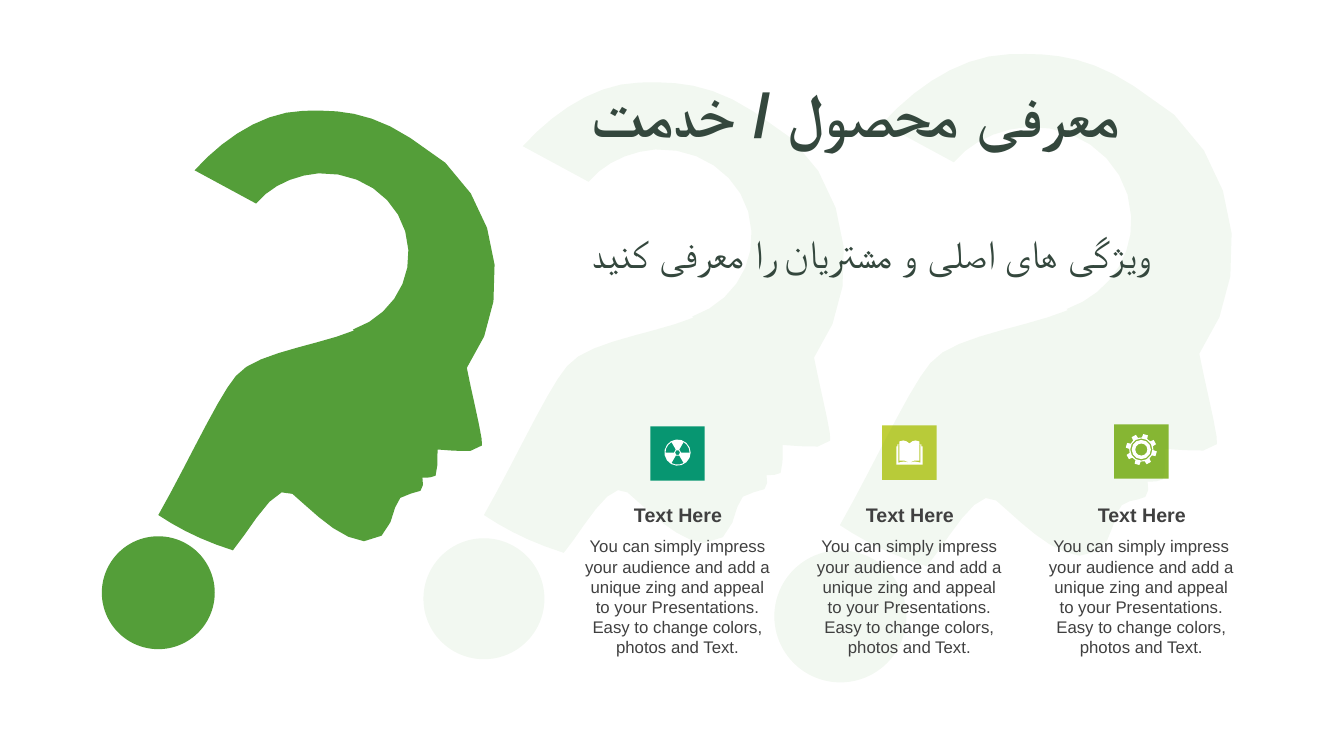
from math import cos, radians, sin
from lxml.etree import SubElement
from pptx import Presentation
from pptx.dml.color import RGBColor
from pptx.enum.shapes import MSO_SHAPE as Preset
from pptx.enum.text import MSO_ANCHOR as Anchor, MSO_AUTO_SIZE as AutoSize, PP_ALIGN as Align
from pptx.oxml.ns import qn
from pptx.util import Pt

PX = 9144
GREEN, DARK, GREY, WHITE = "549E39", "34473D", "404040", "FFFFFF"


def paint(shape, color, opacity=100):
    shape.shadow.inherit = False
    shape.line.fill.background()
    shape.fill.solid()
    shape.fill.fore_color.rgb = RGBColor.from_string(color)
    if opacity < 100:
        color_node = shape.element.spPr.find(".//" + qn("a:srgbClr"))
        SubElement(color_node, qn("a:alpha"), val=str(opacity * 1000))


def write(shape, text, box, size, color, bold=False, align=Align.LEFT, anchor=Anchor.TOP):
    shape.left, shape.top, shape.width, shape.height = [length * PX for length in box]
    frame = shape.text_frame
    frame.word_wrap = True
    frame.auto_size = AutoSize.SHAPE_TO_FIT_TEXT
    frame.vertical_anchor = anchor
    paragraph = frame.paragraphs[0]
    paragraph.alignment = align
    run = paragraph.add_run()
    run.text = text
    run.font.name = "Arial"
    run.font.size = Pt(size)
    run.font.bold = bold
    run.font.color.rgb = RGBColor.from_string(color)
    SubElement(run.font._element, qn("a:cs"), typeface="Arial")


presentation = Presentation()
presentation.slide_width = 1333 * PX
presentation.slide_height = 750 * PX
slide = presentation.slides.add_slide(presentation.slide_layouts[5])
shapes = slide.shapes

head = [
    (301, 110), (334, 109, 366, 110, 407, 137), (499, 186, 512, 298, 463, 365),
    (468, 391, 480, 439, 478, 442), (470, 452, 449, 446, 434, 446),
    (434, 455, 434, 470, 432, 472), (429, 474, 424, 474, 419, 474),
    (419, 478, 421, 485, 417, 487), (412, 490, 403, 489, 397, 494),
    (388, 500, 392, 538, 361, 537), (335, 534, 310, 507, 290, 490),
    (274, 476, 248, 526, 231, 546), (202, 537, 178, 525, 157, 511),
    (185, 462, 216, 394, 234, 373), (252, 350, 315, 343, 351, 328), (350, 327),
    (384, 315, 407, 284, 405, 248), (403, 203, 363, 170, 316, 172),
    (291, 174, 268, 185, 254, 202), (193, 169), (222, 137, 261, 111, 301, 110),
]

book = [
    [(902, 440), (900, 438, 898, 437, 896, 437), (892, 438),
     (892, 441), (890, 441), (890, 443), (889, 443), (889, 461), (915, 461),
     (915, 443), (914, 443), (914, 441), (912, 441), (912, 438), (908, 437),
     (906, 437, 904, 438, 902, 440)],
]
for side in (-1, 1):
    book.append([(902 + 11 * side, 441), (902 + 10 * side, 441), (902 + 10 * side, 457),
                 (902 + 7 * side, 456, 902 + 3 * side, 457, 902, 459),
                 (902 + 4 * side, 458, 902 + 7 * side, 457, 902 + 11 * side, 459)])

radiation_arcs = [[(13, angle) for angle in range(0, 360, 24)],
                  [(2.5, angle) for angle in range(0, 360, 60)]]
for start in (60, 180, 300):
    radiation_arcs.append([(3.5, start), *[(12, start + step) for step in range(0, 61, 20)],
                           (3.5, start + 60)])
gear_arcs = [[(radius, angle) for angle in range(0, 360, 30)] for radius in (11, 9.5, 6)]
gear_arcs.append([(radius, tooth * 45 - 74 + offset) for tooth in range(8)
                  for radius, offset in ((12, -13), (15.5, -9), (15.5, 9), (12, 13))])
radiation, gear = [
    [[(x + radius * cos(radians(angle)), y + radius * sin(radians(angle)))
      for radius, angle in arc] for arc in arcs]
    for x, y, arcs in ((672, 449, radiation_arcs), (1132, 446, gear_arcs))
]

outlines = []
for x, y, scale, dot_x, dot_y, dot_size, opacity in (
    (480, 511, 1.07, 420, 534, 120, 7),
    (833, 521, 1.165, 768, 546, 131, 7),
    (157, 511, 1, 101, 532, 112, 100),
):
    placed = [tuple((value - (157, 511)[i % 2]) * scale + (x, y)[i % 2]
                    for i, value in enumerate(segment)) for segment in head]
    outlines.append(([placed], GREEN, opacity))
    dot = shapes.add_shape(Preset.OVAL, dot_x * PX, dot_y * PX, dot_size * PX, dot_size * PX)
    paint(dot, GREEN, opacity)

for x, y, color, icon in ((645, 423, "029676", radiation), (875, 422, "C0CF3A", book),
                          (1105, 421, "8AB833", gear)):
    tile = shapes.add_shape(Preset.RECTANGLE, x * PX, y * PX, 54 * PX, 54 * PX)
    paint(tile, color)
    outlines.append((icon, WHITE, 100))

for contours, color, opacity in outlines:
    builder = None
    for contour in contours:
        points = [contour[0]]
        for segment in contour[1:]:
            if len(segment) == 2:
                points.append(segment)
                continue
            x0, y0 = points[-1]
            x1, y1, x2, y2, x3, y3 = segment
            steps = min(7, 2 + int((abs(x3 - x0) + abs(y3 - y0)) / 30))
            for step in range(1, steps + 1):
                t = step / steps
                u = 1 - t
                points.append(tuple(
                    u**3 * a + 3 * u * u * t * b + 3 * u * t * t * c + t**3 * d
                    for a, b, c, d in ((x0, x1, x2, x3), (y0, y1, y2, y3))))
        points = [(round(x * PX), round(y * PX)) for x, y in points]
        if builder is None:
            builder = shapes.build_freeform(*points[0])
        else:
            builder.move_to(*points[0])
        builder.add_line_segments(points[1:], close=True)
    paint(builder.convert_to_shape(), color, opacity)

title = shapes.title
title.element.getparent().append(title.element)
write(title, "معرفی محصول / خدمت", (577, 70, 582, 84), 44, DARK, bold=True)
write(shapes.add_textbox(0, 0, PX, PX), "ویژگی های اصلی و مشتریان را معرفی کنید",
      (577, 223, 657, 57), 28, DARK)

for column in range(3):
    left = 569 + 230 * column
    write(shapes.add_textbox(0, 0, PX, PX), "Text Here", (left, 494, 207, 34), 14, GREY,
          bold=True, align=Align.CENTER, anchor=Anchor.MIDDLE)
    write(shapes.add_textbox(0, 0, PX, PX),
          "You can simply impress your audience and add a unique zing and appeal to your "
          "Presentations. Easy to change colors, photos and Text.",
          (left, 527, 206, 131), 12, GREY, align=Align.CENTER)

presentation.save("out.pptx")
